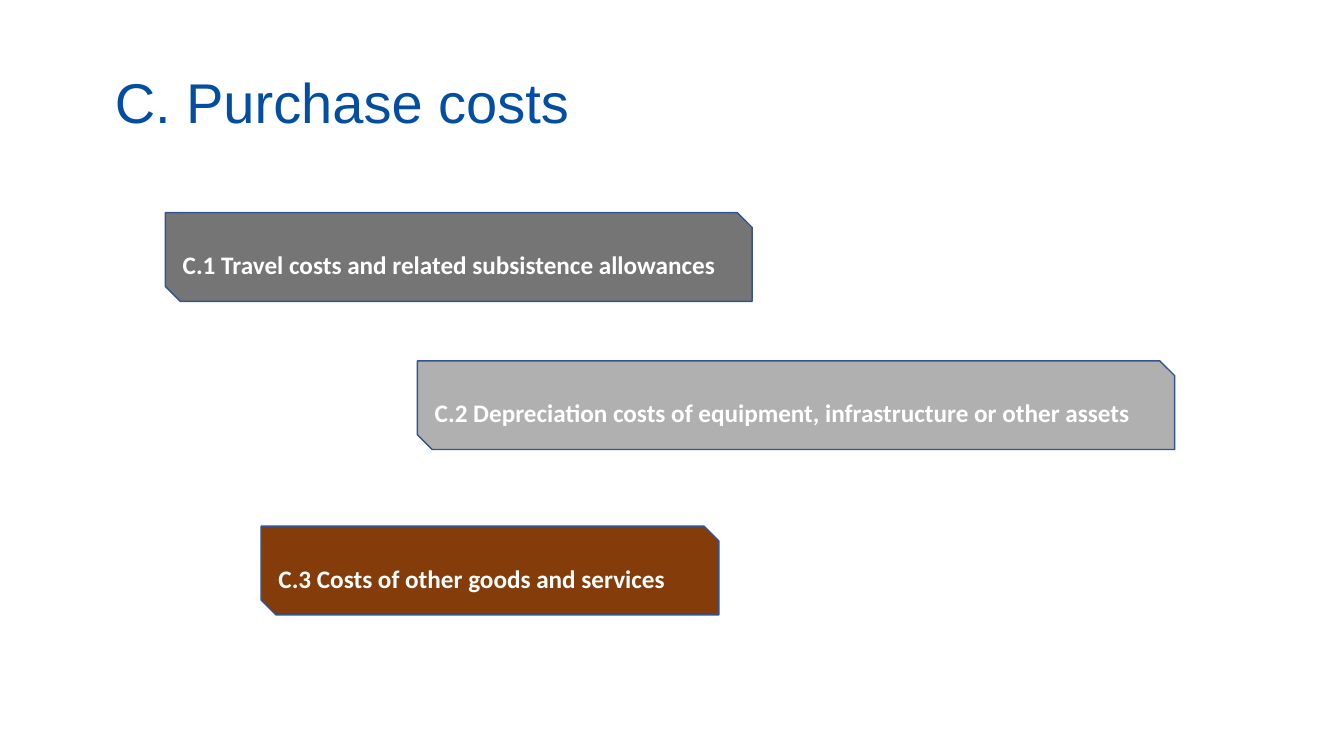
from dataclasses import dataclass

from pptx import Presentation
from pptx.dml.color import RGBColor
from pptx.enum.shapes import MSO_SHAPE
from pptx.enum.text import MSO_ANCHOR, PP_ALIGN
from pptx.util import Inches, Pt


@dataclass(frozen=True)
class Theme:
    title_color: str = "034EA2"
    outline: str = "325491"
    label_color: str = "FFFFFF"
    travel: str = "757575"
    depreciation: str = "B0B0B0"
    other_goods: str = "843C0B"
    title_font: str = "Arial"
    label_font: str = "Calibri"
    title_size: int = 40
    label_size: int = 18


THEME = Theme()
BANNER_HEIGHT = 0.88

# Cost category: label, fill, left, top, width
CATEGORIES = [
    ("C.1 Travel costs and related subsistence allowances",
     THEME.travel, 1.64, 2.11, 5.82),
    ("C.2 Depreciation costs of equipment, infrastructure or other assets",
     THEME.depreciation, 4.14, 3.58, 7.51),
    ("C.3 Costs of other goods and services",
     THEME.other_goods, 2.59, 5.22, 4.54),
]


def add_run(paragraph, text, font_name, size, color, bold=False):
    run = paragraph.add_run()
    run.text = text
    run.font.name = font_name
    run.font.size = Pt(size)
    run.font.bold = bold
    run.font.color.rgb = RGBColor.from_string(color)


def add_title(slide, text, left, top, width, height):
    title = slide.shapes.add_textbox(
        Inches(left), Inches(top), Inches(width), Inches(height))
    frame = title.text_frame
    frame.word_wrap = True
    frame.vertical_anchor = MSO_ANCHOR.BOTTOM
    frame.margin_bottom = 0
    heading = frame.paragraphs[0]
    heading.line_spacing = 0.9
    add_run(heading, text, THEME.title_font, THEME.title_size, THEME.title_color)


def add_category(slide, text, fill, left, top, width, height):
    # Banner with two snipped corners
    banner = slide.shapes.add_shape(
        MSO_SHAPE.SNIP_2_DIAG_RECTANGLE,
        Inches(left), Inches(top), Inches(width), Inches(height))
    banner.shadow.inherit = False
    banner.fill.solid()
    banner.fill.fore_color.rgb = RGBColor.from_string(fill)
    banner.line.color.rgb = RGBColor.from_string(THEME.outline)
    banner.line.width = Pt(1)

    # Label
    frame = banner.text_frame
    frame.word_wrap = True
    frame.vertical_anchor = MSO_ANCHOR.MIDDLE
    label = frame.paragraphs[0]
    label.alignment = PP_ALIGN.JUSTIFY
    label.line_spacing = 1.5
    label.space_after = Pt(8)
    add_run(label, text, THEME.label_font, THEME.label_size,
            THEME.label_color, bold=True)


def main():
    deck = Presentation()
    deck.slide_width = Inches(13.33)
    deck.slide_height = Inches(7.5)
    slide = deck.slides.add_slide(deck.slide_layouts[6])

    for text, fill, left, top, width in CATEGORIES:
        add_category(slide, text, fill, left, top, width, BANNER_HEIGHT)
    add_title(slide, "C. Purchase costs", 1.04, 0.49, 11.5, 0.86)

    deck.save("out.pptx")


if __name__ == "__main__":
    main()
